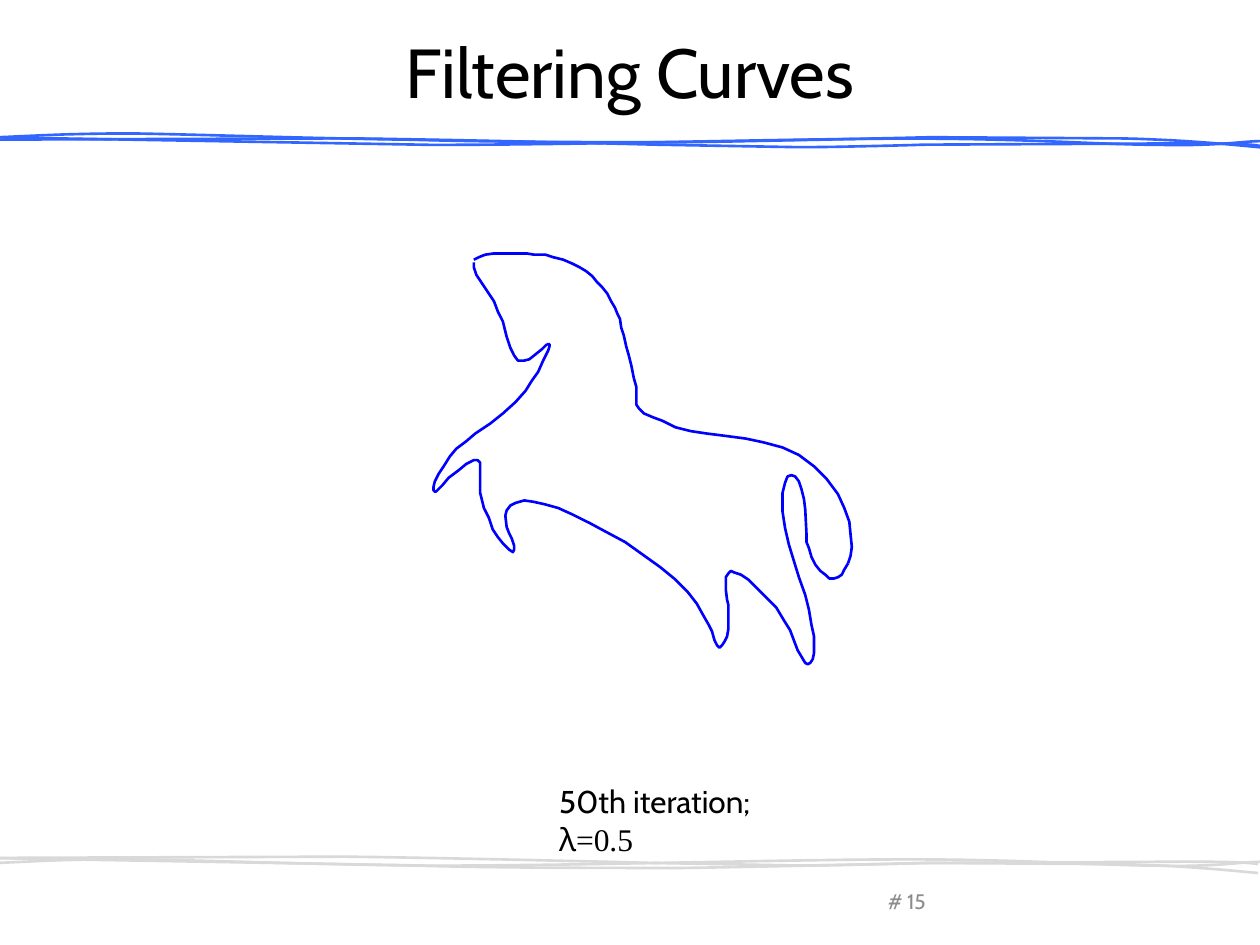
import pptx
import pptx.dml.color
import pptx.enum.text
import pptx.util

Cm = pptx.util.Cm
UNIT = 0.0254  # outline coordinates are hundredths of an inch, in cm

# Strokes of the hand-drawn rule: start, then lines (2 numbers) or curves (6)
RULE_STROKES = [
    [(-1, 0), (344, 6), (465, 6, 627, 1, 723, 1), (819, 1, 876, 6, 922, 6),
     (968, 7, 987, 3, 1000, 3), (1013, 2, 1006, 3, 999, 3)],
    [(-1, 3), (26, 2, 52, 0, 106, 0), (161, 1, 252, 4, 325, 5),
     (397, 7, 474, 7, 543, 7), (612, 6, 740, 3, 740, 3), (892, 4),
     (935, 5, 968, 8, 1000, 11)],
    [(-2, 1), (275, 0), (362, 1, 520, 5, 520, 5), (634, 7),
     (670, 7, 735, 5, 735, 5), (943, 4), (987, 4, 994, 5, 1000, 6)],
]

MANE_AND_BACK = [
    (32, 5), (36, 3), (41, 1), (48, 0), (74, 0), (80, 1), (89, 1), (95, 3),
    (103, 5), (110, 8), (116, 11), (121, 14), (126, 18), (130, 23), (134, 27),
    (138, 32), (141, 38), (144, 43), (146, 48), (148, 52), (149, 59),
    (151, 65), (153, 74), (155, 81), (157, 89), (159, 99), (161, 106),
    (161, 120), (163, 123), (167, 127), (174, 130), (182, 133), (192, 138),
    (204, 141), (217, 143), (233, 145), (248, 147), (262, 150), (277, 154),
    (290, 160), (302, 169), (312, 179), (321, 191), (326, 202), (330, 213),
    (331, 223), (332, 233), (331, 240), (329, 246)]
TAIL_AND_HIND_LEGS = [
    (329, 246), (326, 251), (324, 255), (321, 257), (318, 258), (314, 258),
    (311, 255), (307, 252), (303, 247), (300, 241), (298, 234), (296, 229),
    (296, 222), (295, 203), (294, 195), (292, 187), (290, 181), (287, 177),
    (284, 176), (281, 177), (279, 182), (277, 190), (277, 205), (279, 218),
    (282, 231), (286, 244), (290, 257), (295, 271), (298, 283), (300, 295),
    (302, 304), (302, 317), (301, 322), (299, 325), (297, 326), (295, 325),
    (292, 320), (289, 315), (286, 307), (283, 299), (278, 291), (272, 281),
    (264, 273), (257, 266), (250, 259), (244, 255), (238, 253), (236, 252),
    (234, 254), (232, 257), (232, 267), (233, 275), (234, 279), (234, 298),
    (233, 304), (231, 308), (229, 311), (227, 313), (225, 311), (223, 307),
    (221, 300), (218, 294)]
BELLY_AND_FORELEGS = [
    (218, 294), (214, 287), (209, 278), (202, 269), (191, 258), (180, 249),
    (166, 239), (152, 229), (137, 221), (124, 214), (110, 207), (99, 202),
    (88, 199), (79, 197), (72, 196), (65, 198), (61, 200), (58, 204),
    (57, 208), (58, 217), (60, 222), (62, 226), (64, 232), (64, 235),
    (63, 237), (60, 235), (55, 230), (51, 225), (47, 219), (44, 210),
    (40, 202), (38, 194), (37, 190), (37, 166), (35, 164), (32, 164),
    (26, 167), (20, 172), (12, 178), (7, 184), (2, 189), (1, 189), (0, 188),
    (0, 185), (1, 181), (4, 175), (8, 169), (13, 161), (18, 155), (26, 149),
    (33, 143), (45, 135), (55, 127), (65, 118), (73, 109), (78, 101),
    (83, 94), (87, 85), (91, 77), (92, 74), (92, 72), (90, 72)]
HEAD = [
    (90, 72), (86, 76), (81, 80), (76, 84), (72, 85), (67, 85), (64, 81),
    (61, 75), (58, 66), (55, 54), (51, 46), (48, 38), (42, 29), (38, 23),
    (34, 17), (32, 11), (32, 7)]


def rgb(color):
    return pptx.dml.color.RGBColor.from_string(color)


def flatten(stroke, steps=12):
    """Turn a stroke of lines and cubic curves into points."""
    points = [stroke[0]]
    for seg in stroke[1:]:
        if len(seg) == 2:
            points.append(seg)
            continue
        x0, y0 = points[-1]
        x1, y1, x2, y2, x3, y3 = seg
        for i in range(1, steps + 1):
            t = i / steps
            a, b, c, d = (1 - t)**3, 3*t*(1 - t)**2, 3*t*t*(1 - t), t**3
            points.append((a*x0 + b*x1 + c*x2 + d*x3,
                           a*y0 + b*y1 + c*y2 + d*y3))
    return points


def add_outline(s, left, top, points, color):
    points = [(Cm(x * UNIT), Cm(y * UNIT)) for x, y in points]
    builder = s.shapes.build_freeform(*points[0], scale=1.0)
    builder.add_line_segments(points[1:], close=False)
    sp = builder.convert_to_shape(Cm(left), Cm(top))
    sp.shadow.inherit = False
    sp.fill.background()
    sp.line.color.rgb = rgb(color)
    sp.line.width = pptx.util.Pt(1.5)


def add_rule(s, left, tops, color):
    for top, stroke in zip(tops, RULE_STROKES):
        add_outline(s, left, top, flatten(stroke), color)


def add_horse(s, left, top):
    for part in (MANE_AND_BACK, TAIL_AND_HIND_LEGS, BELLY_AND_FORELEGS, HEAD):
        add_outline(s, left, top, part, "0000FF")


def add_text(s, box, lines, size, color="000000", centred=True):
    """Lines are lists of (text, font) runs, split by line breaks."""
    tf = s.shapes.add_textbox(*(Cm(v) for v in box)).text_frame
    tf.word_wrap = True
    p = tf.paragraphs[0]
    if centred:
        tf.vertical_anchor = pptx.enum.text.MSO_ANCHOR.MIDDLE
        p.alignment = pptx.enum.text.PP_ALIGN.CENTER
    for i, line in enumerate(lines):
        if i:
            p.add_line_break()
        for text, font in line:
            r = p.add_run()
            r.text = text
            r.font.name = font
            r.font.size = pptx.util.Pt(size)
            r.font.color.rgb = rgb(color)


def add_page_number(s, left, top):
    add_text(s, (left, top + 0.13, 0.76, 0.76), [[("#", "Cabin")]], 12, "8C8C8C")
    add_text(s, (left, top, 1.65, 1.02), [[("15", "Cabin")]], 12, "8C8C8C")


def main():
    prs = pptx.Presentation()
    prs.slide_width, prs.slide_height = Cm(25.4), Cm(19.05)
    s = prs.slides.add_slide(prs.slide_layouts[6])

    # Rules under the title and above the footer
    add_rule(s, 0, (2.77, 2.69, 2.79), "3366FF")
    add_rule(s, -0.04, (17.3, 17.32, 17.27), "D9D9D9")

    # Title, curve and caption
    add_text(s, (1.27, 0.76, 22.86, 1.35), [[("Filtering Curves", "Cabin")]], 39.6)
    add_horse(s, 8.74, 5.11)
    add_text(s, (11.02, 15.65, 5.92, 1.02),
             [[("50th iteration;", "Cabin")],
              [("λ", "Cabin"), ("=0.5", "Times New Roman")]], 18, centred=False)

    add_page_number(s, 17.65, 17.65)
    prs.save("out.pptx")


if __name__ == "__main__":
    main()
